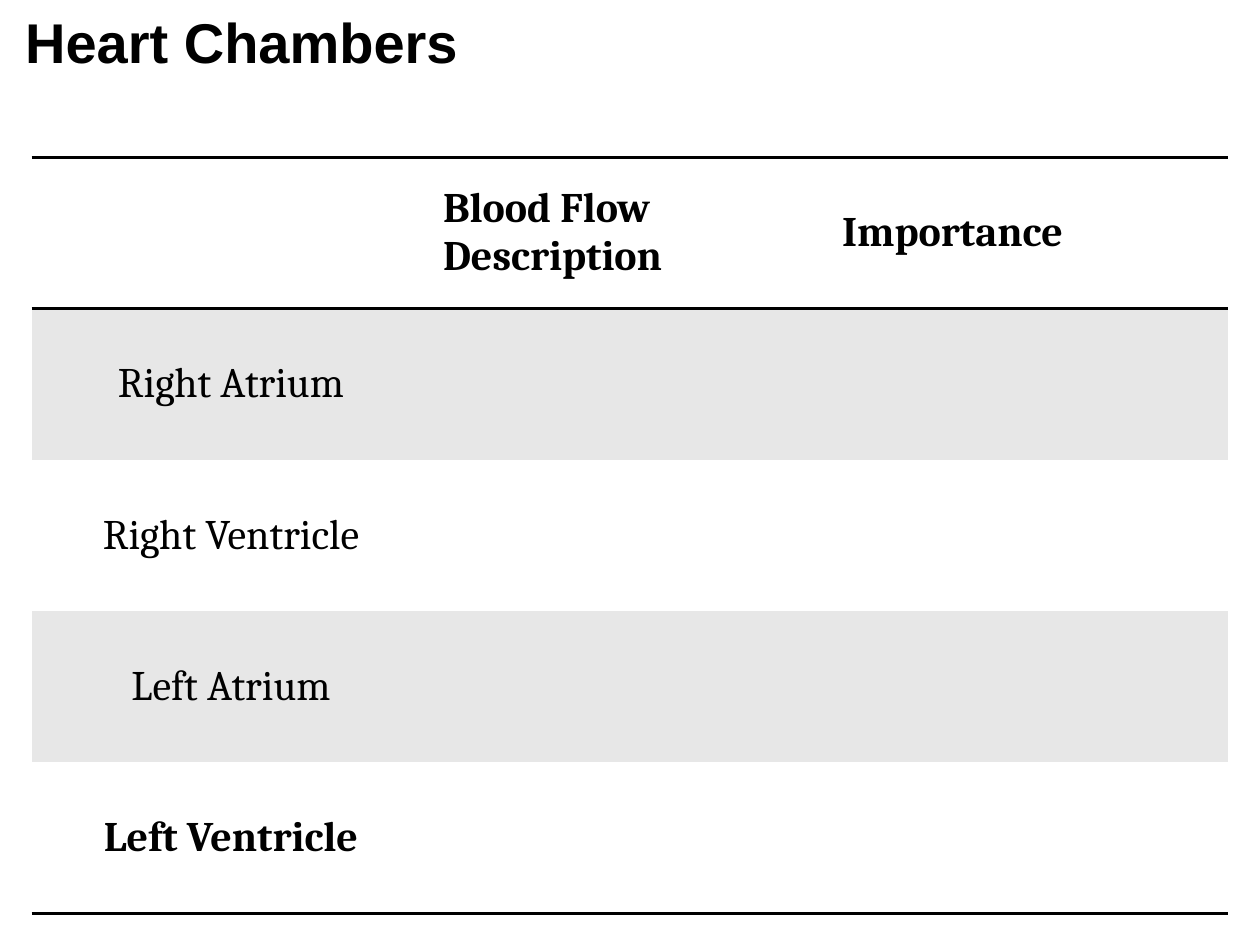
from lxml import etree
from pptx import Presentation
from pptx.dml.color import RGBColor
from pptx.enum.shapes import MSO_SHAPE
from pptx.enum.text import MSO_ANCHOR, PP_ALIGN
from pptx.oxml.ns import qn
from pptx.util import Pt

TITLE = "Heart Chambers"
ROWS = [
    ("", "Blood Flow Description", "Importance"),
    ("Right Atrium", "", ""),
    ("Right Ventricle", "", ""),
    ("Left Atrium", "", ""),
    ("Left Ventricle", "", ""),
]
COLORS = {"ink": "000000", "paper": "FFFFFF", "band": "E7E7E7"}
TITLE_FONT = {"name": "Arial", "size": Pt(32), "bold": True}
TABLE_FONT = {"name": "Cambria", "size": Pt(24)}
TITLE_FRAME = {
    "word_wrap": True, "vertical_anchor": MSO_ANCHOR.BOTTOM,
    "margin_left": Pt(14.4), "margin_right": Pt(7.2),
    "margin_top": Pt(3.6), "margin_bottom": Pt(3.6),
}
LEFT, TOP, WIDTH, HEIGHT = 18, 90, 684, 432
RULE_WIDTH = 2
NO_STYLE = "{2D5ABB26-0587-4C30-8999-92F81FD0307C}"


def set_all(target, values):
    for name, value in values.items():
        setattr(target, name, value)


def paint(fill, color):
    fill.solid()
    fill.fore_color.rgb = RGBColor.from_string(COLORS[color])


def write(para, text, font):
    span = para.add_run()
    span.text = text
    set_all(span.font, font)
    span.font.color.rgb = RGBColor.from_string(COLORS["ink"])


def add_rules(cell, sides):
    """Draw cell borders; they must stand before the fill in the XML."""
    props = cell._tc.get_or_add_tcPr()
    for index, side in enumerate(sides):
        line = etree.Element(qn(f"a:ln{side}"), w=str(Pt(RULE_WIDTH)))
        fill = etree.SubElement(line, qn("a:solidFill"))
        etree.SubElement(fill, qn("a:srgbClr"), val=COLORS["ink"])
        props.insert(index, line)


def add_title(page):
    box = page.shapes.add_shape(MSO_SHAPE.RECTANGLE, 0, 0, Pt(720), Pt(46))
    box.shadow.inherit = False
    box.line.fill.background()
    paint(box.fill, "paper")
    set_all(box.text_frame, TITLE_FRAME)
    para = box.text_frame.paragraphs[0]
    para.alignment = PP_ALIGN.LEFT
    write(para, TITLE, TITLE_FONT)


def add_chamber_table(page):
    table = page.shapes.add_table(
        len(ROWS), len(ROWS[0]), Pt(LEFT), Pt(TOP), Pt(WIDTH), Pt(HEIGHT)).table
    set_all(table, {"first_row": False, "horz_banding": False})
    table._tbl.tblPr.find(qn("a:tableStyleId")).text = NO_STYLE
    last = len(ROWS) - 1
    rules = {0: "TB", last: "B"}
    for r, row in enumerate(ROWS):
        for c, text in enumerate(row):
            cell = table.cell(r, c)
            paint(cell.fill, "band" if r % 2 else "paper")
            add_rules(cell, rules.get(r, ""))
            cell.vertical_anchor = MSO_ANCHOR.MIDDLE
            if text:
                para = cell.text_frame.paragraphs[0]
                para.alignment = PP_ALIGN.CENTER if r else PP_ALIGN.LEFT
                write(para, text, {**TABLE_FONT, "bold": r in (0, last)})


deck = Presentation()
set_all(deck, {"slide_width": Pt(720), "slide_height": Pt(540)})
page = deck.slides.add_slide(deck.slide_layouts[6])
add_title(page)
add_chamber_table(page)
deck.save("out.pptx")
